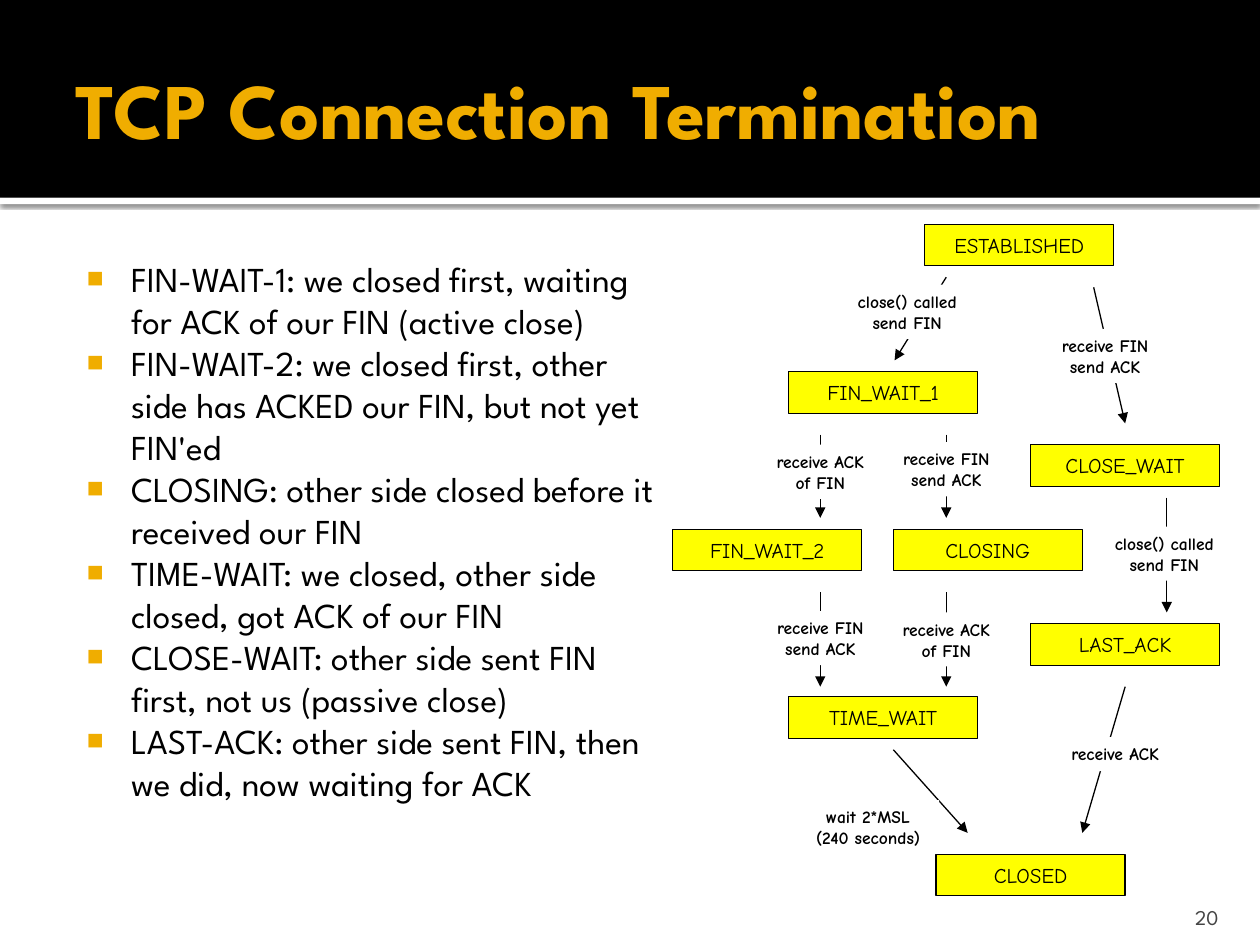
import pptx
import pptx.util
import pptx.dml.color
import pptx.enum.shapes
import pptx.enum.text
import pptx.oxml
import pptx.oxml.ns

HEADING = "TCP Connection Termination"
DEFINITIONS = [
    "FIN-WAIT-1: we closed first, waiting for ACK of our FIN (active close)",
    "FIN-WAIT-2: we closed first, other side has ACKED our FIN, but not yet FIN'ed",
    "CLOSING: other side closed before it received our FIN",
    "TIME-WAIT: we closed, other side closed, got ACK of our FIN",
    "CLOSE-WAIT: other side sent FIN first, not us (passive close)",
    "LAST-ACK: other side sent FIN, then we did, now waiting for ACK",
]
PAGE = "20"

STATE_SIZE = (1.5, 0.33)
STATES = {
    "ESTABLISHED": (7.34, 1.78),
    "FIN_WAIT_1": (6.26, 2.95),
    "CLOSE_WAIT": (8.18, 3.53),
    "FIN_WAIT_2": (5.34, 4.2),
    "CLOSING": (7.09, 4.2),
    "LAST_ACK": (8.18, 4.95),
    "TIME_WAIT": (6.26, 5.53),
    "CLOSED": (7.43, 6.78),
}

CLOSE_CALL = (["close() called", "send FIN"], 1.07)
GOT_FIN = (["receive FIN", "send ACK"], 1.01)
GOT_ACK_OF_FIN = (["receive ACK", "of FIN"], 1.01)
GOT_ACK = (["receive ACK"], 1.01)
TIMEOUT = (["wait 2*MSL", "(240 seconds)"], 1.13)

LEFT, RIGHT = 6.51, 7.51
TRANSITIONS = [
    ((RIGHT, 2.2), (7.1, 2.86), CLOSE_CALL, (7.2, 2.26)),
    ((8.68, 2.28), (8.93, 3.36), GOT_FIN, (8.77, 2.61)),
    ((LEFT, 3.45), (LEFT, 4.11), GOT_ACK_OF_FIN, (LEFT, 3.53)),
    ((RIGHT, 3.45), (RIGHT, 4.11), GOT_FIN, (RIGHT, 3.51)),
    ((9.26, 3.95), (9.26, 4.86), CLOSE_CALL, (9.24, 4.18)),
    ((LEFT, 4.7), (LEFT, 5.45), GOT_FIN, (LEFT, 4.85)),
    ((RIGHT, 4.7), (RIGHT, 5.45), GOT_ACK_OF_FIN, (RIGHT, 4.86)),
    ((8.93, 5.45), (8.59, 6.61), GOT_ACK, (8.85, 5.85)),
    ((7.09, 5.95), (7.68, 6.61), TIMEOUT, (6.89, 6.35)),
]

TEXT_FONT, DIAGRAM_FONT = "League Spartan", "Comic Neue"
BLACK, WHITE, GOLD, YELLOW, GRAY = "000000", "FFFFFF", "F0AD00", "FFFF00", "454545"
ALIGN = pptx.enum.text.PP_ALIGN
ANCHOR = pptx.enum.text.MSO_ANCHOR
AUTO_SIZE = pptx.enum.text.MSO_AUTO_SIZE
inches = pptx.util.Inches


def color(value):
    return pptx.dml.color.RGBColor.from_string(value)


def xml(parent, markup):
    parent.append(pptx.oxml.parse_xml(
        markup.replace(" ", f" {pptx.oxml.ns.nsdecls('a')} ", 1)))


def write(frame, lines, font, size, ink, align, anchor, bold=False,
          insets=(0.1, 0.05, 0.1, 0.05), wrap=True):
    frame.text = "\n".join(lines)
    frame.auto_size = AUTO_SIZE.NONE
    frame.word_wrap = wrap
    frame.vertical_anchor = anchor
    (frame.margin_left, frame.margin_top,
     frame.margin_right, frame.margin_bottom) = map(inches, insets)
    for paragraph in frame.paragraphs:
        paragraph.alignment = align
        paragraph.space_before = pptx.util.Pt(0)
        paragraph.font.name = font
        paragraph.font.size = pptx.util.Pt(size)
        paragraph.font.bold = bold
        paragraph.font.color.rgb = color(ink)


def place(shape, *box):
    shape.left, shape.top, shape.width, shape.height = map(inches, box)


def rectangle(box, fill, outline=None):
    shape = slide.shapes.add_shape(
        pptx.enum.shapes.MSO_SHAPE.RECTANGLE, *map(inches, box))
    shape.shadow.inherit = False
    shape.fill.solid()
    shape.fill.fore_color.rgb = color(fill)
    if outline:
        shape.line.color.rgb = color(outline)
        shape.line.width = pptx.util.Pt(0.75)
    else:
        shape.line.fill.background()
    return shape


def arrow(start, end):
    connector = slide.shapes.add_connector(
        pptx.enum.shapes.MSO_CONNECTOR.STRAIGHT, *map(inches, start + end))
    connector.line.color.rgb = color(BLACK)
    connector.line.width = pptx.util.Pt(0.75)
    xml(connector.line._get_or_add_ln(), '<a:tailEnd type="triangle"/>')
    xml(connector._element.spPr, "<a:effectLst />")


deck = pptx.Presentation()
deck.slide_width, deck.slide_height = inches(10), inches(7.5)
slide = deck.slides.add_slide(deck.slide_layouts[1])
heading, definitions = slide.placeholders

stripe = rectangle((0, 1.57, 10, 0.05), WHITE)
xml(stripe._element.spPr.find(pptx.oxml.ns.qn("a:effectLst")),
    '<a:outerShdw blurRad="31750" dist="10160" dir="5400000" algn="t" rotWithShape="0">'
    '<a:srgbClr val="000000"><a:alpha val="60000"/></a:srgbClr></a:outerShdw>')
banner = rectangle((0, 0, 10, 1.57), BLACK)
for backdrop in (stripe, banner):
    heading._element.addprevious(backdrop._element)

place(heading, 0.5, 0.17, 9, 1.37)
write(heading.text_frame, [HEADING], TEXT_FONT, 45, GOLD, ALIGN.LEFT, ANCHOR.MIDDLE,
      bold=True, insets=(0.1, 0.05, 0.05, 0.05))

place(definitions, 0.5, 1.94, 4.84, 5.06)
write(definitions.text_frame, DEFINITIONS, TEXT_FONT, 20, BLACK, ALIGN.LEFT, ANCHOR.TOP,
      insets=(0.06, 0.1, 0.1, 0.05))
for paragraph in definitions.text_frame.paragraphs:
    properties = paragraph._p.get_or_add_pPr()
    properties.set("marL", str(inches(0.48)))
    properties.set("indent", str(inches(-0.35)))
    for bullet in (f'<a:buClr ><a:srgbClr val="{GOLD}"/></a:buClr>',
                   '<a:buSzPct val="80000"/>', '<a:buChar char="■"/>'):
        xml(properties, bullet)
    properties.append(properties.find(pptx.oxml.ns.qn("a:defRPr")))

page = slide.shapes.add_textbox(*map(inches, (8.97, 7.08, 0.8, 0.3)))
write(page.text_frame, [PAGE], TEXT_FONT, 12, GRAY, ALIGN.RIGHT, ANCHOR.BOTTOM,
      insets=(0.1, 0.05, 0.1, 0))

for start, end, (lines, width), (center, top) in TRANSITIONS:
    arrow(start, end)
    label = rectangle((center - width / 2, top, width, 0.11 + 0.16 * len(lines)), WHITE)
    write(label.text_frame, lines, DIAGRAM_FONT, 10, BLACK, ALIGN.CENTER, ANCHOR.TOP,
          bold=True, wrap=False)

for state, corner in STATES.items():
    box = rectangle(corner + STATE_SIZE, YELLOW, BLACK)
    write(box.text_frame, [state], DIAGRAM_FONT, 12, BLACK, ALIGN.CENTER, ANCHOR.MIDDLE,
          wrap=False)

deck.save("out.pptx")
